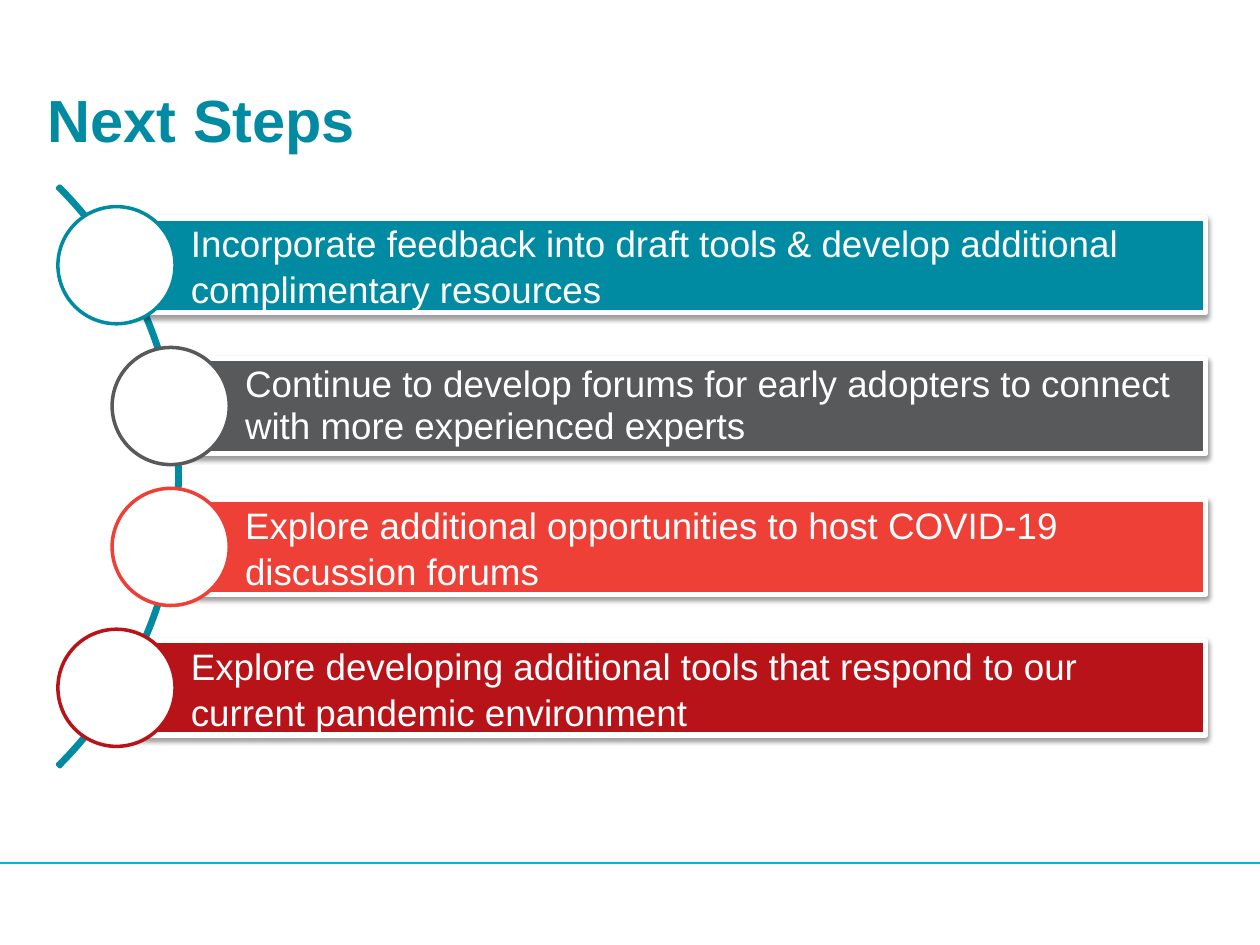
from lxml import etree
from pptx import Presentation
from pptx.dml.color import RGBColor
from pptx.enum.shapes import MSO_CONNECTOR, MSO_SHAPE
from pptx.enum.text import MSO_ANCHOR, PP_ALIGN
from pptx.oxml.ns import qn
from pptx.util import Inches, Pt

RECT, OVAL, ARC = MSO_SHAPE.RECTANGLE, MSO_SHAPE.OVAL, MSO_SHAPE.BLOCK_ARC
STRAIGHT = MSO_CONNECTOR.STRAIGHT
LEFT, MIDDLE = PP_ALIGN.LEFT, MSO_ANCHOR.MIDDLE

WHITE = RGBColor(0xFF, 0xFF, 0xFF)
TEAL = RGBColor(0x00, 0x8B, 0xA2)
CYAN = RGBColor(0x00, 0xB7, 0xD5)
GRAY = RGBColor(0x58, 0x59, 0x5B)
CORAL = RGBColor(0xEE, 0x40, 0x36)
CRIMSON = RGBColor(0xB9, 0x13, 0x1A)

BAR_H, CIRCLE, PITCH = 0.75, 0.93, 1.118
STEPS = [
    ("Incorporate feedback into draft tools & develop additional complimentary resources", TEAL, 0, 1.04),
    ("Continue to develop forums for early adopters to connect with more experienced experts", GRAY, 0.43, 0.95),
    ("Explore additional opportunities to host COVID-19 discussion forums", CORAL, 0.43, 1.04),
    ("Explore developing additional tools that respond to our current pandemic environment", CRIMSON, 0, 1.04),
]


def add_shadow(shape, alpha, blur, dist):
    """Give a shape a soft black shadow that falls straight down."""
    shape.shadow.inherit = False
    effects = shape._element.spPr.find(qn("a:effectLst"))
    shadow = etree.SubElement(effects, qn("a:outerShdw"), blurRad=str(Pt(blur)),
                              dist=str(Pt(dist)), dir="5400000", rotWithShape="0")
    color = etree.SubElement(shadow, qn("a:srgbClr"), val="000000")
    etree.SubElement(color, qn("a:alpha"), val=str(alpha * 1000))


def add_shape(s, kind, box, fill=None, line=None, width=2):
    """Add a preset shape in a box given in inches."""
    sp = s.shapes.add_shape(kind, *(Inches(v) for v in box))
    sp.shadow.inherit = False
    if fill is None:
        sp.fill.background()
    else:
        sp.fill.solid()
        sp.fill.fore_color.rgb = fill
    if line is None:
        sp.line.fill.background()
    else:
        sp.line.color.rgb = line
        sp.line.width = Pt(width)
    return sp


def set_text(sp, text, size=21, color=WHITE, bold=False, spacing=None, insets=(0, 0, 0, 0)):
    """Write one left-aligned paragraph in the vertical middle of a shape."""
    tf = sp.text_frame
    tf.word_wrap = True
    tf.vertical_anchor = MIDDLE
    tf.margin_left, tf.margin_top, tf.margin_right, tf.margin_bottom = map(Inches, insets)
    p = tf.paragraphs[0]
    p.alignment = LEFT
    p.line_spacing = spacing
    r = p.add_run()
    r.text = text
    r.font.name = "Arial"
    r.font.size = Pt(size)
    r.font.bold = bold
    r.font.color.rgb = color


def add_title(s, text, left, top, width, height):
    """Place and format the title placeholder."""
    sp = s.shapes.title
    sp.left, sp.top, sp.width, sp.height = map(Inches, (left, top, width, height))
    set_text(sp, text, size=34, color=TEAL, bold=True)


def add_footer(s, left, top, width, height):
    """Add the white footer band and the thin rule across it."""
    band = add_shape(s, RECT, (left, top, width, height), fill=WHITE)
    add_shadow(band, 35, 3.1, 1.8)
    y = Inches(top + 0.02)
    rule = s.shapes.add_connector(STRAIGHT, Inches(left), y, Inches(left + width), y)
    rule.line.color.rgb = CYAN
    rule.line.width = Pt(0.75)
    etree.SubElement(rule._element.spPr, qn("a:effectLst"))


def add_step(s, text, color, spacing, left, top, right):
    """Add one bar with its text and the circle at its left end."""
    bar_left = left + CIRCLE / 2
    bar_top = top + (CIRCLE - BAR_H) / 2
    bar = add_shape(s, RECT, (bar_left, bar_top, right - bar_left, BAR_H), color, WHITE, 3)
    add_shadow(bar, 38, 3.1, 1.6)
    set_text(bar, text, spacing=spacing, insets=(0.59, 0.06, 0.06, 0.06))
    add_shape(s, OVAL, (left, top, CIRCLE, CIRCLE), WHITE, color)


def add_steps(s, left, top, right):
    """Add the curved spine and the steps strung along it."""
    arc = add_shape(s, ARC, (left - 5.55, top - 1.12, 6.52, 6.52), line=TEAL)
    for i, value in enumerate((189, 27, 0.004)):
        arc.adjustments[i] = value
    for i, (text, color, indent, spacing) in enumerate(STEPS):
        add_step(s, text, color, spacing, left + indent, top + i * PITCH, right)


def main():
    """Build the slide and save it."""
    prs = Presentation()
    prs.slide_width, prs.slide_height = Inches(10), Inches(7.5)
    s = prs.slides.add_slide(prs.slide_layouts[5])
    add_footer(s, 0, 6.83, 10, 0.67)
    add_title(s, "Next Steps", 0.38, 0.52, 9.25, 0.84)
    add_steps(s, 0.46, 1.64, 9.57)
    prs.save("out.pptx")


if __name__ == "__main__":
    main()
